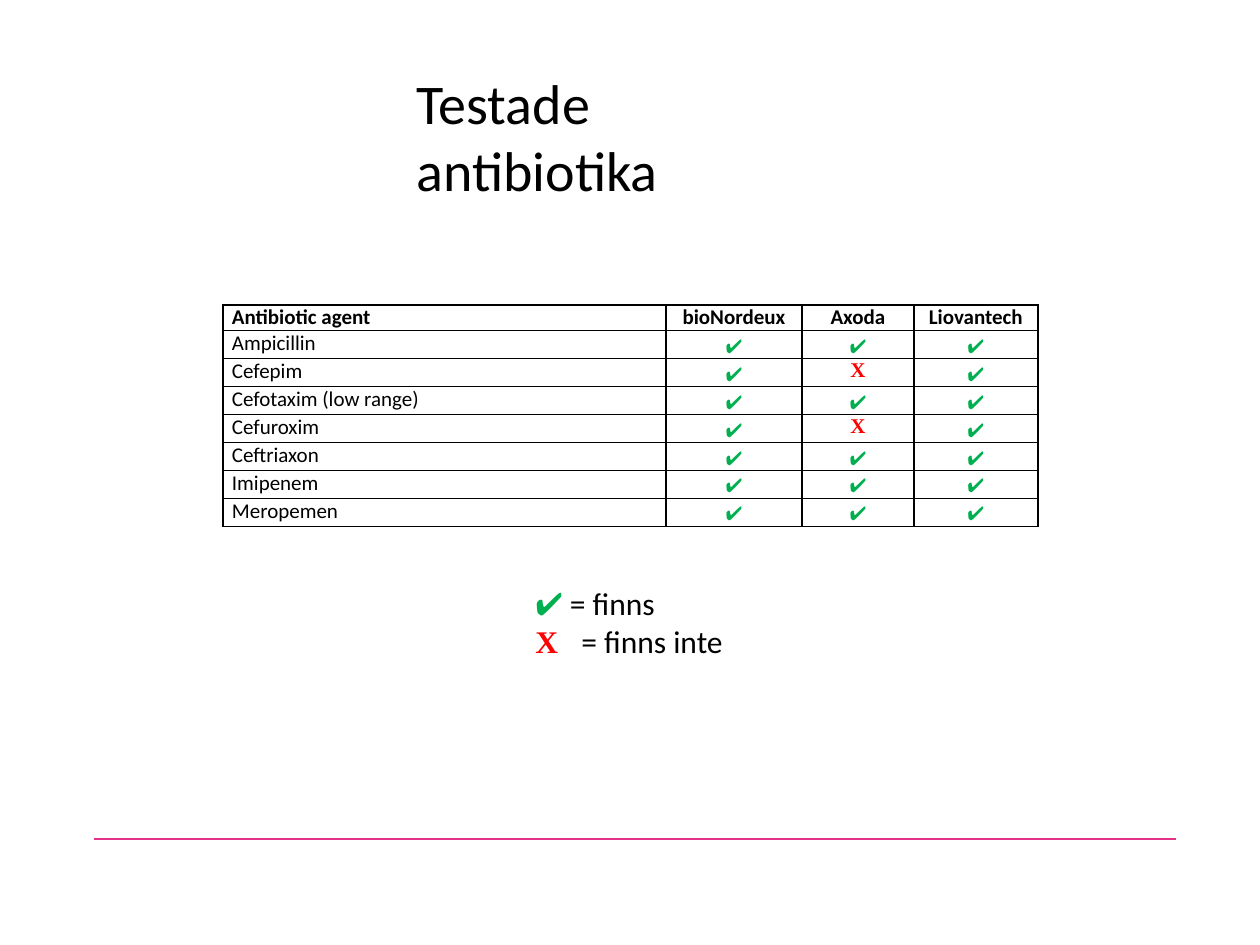
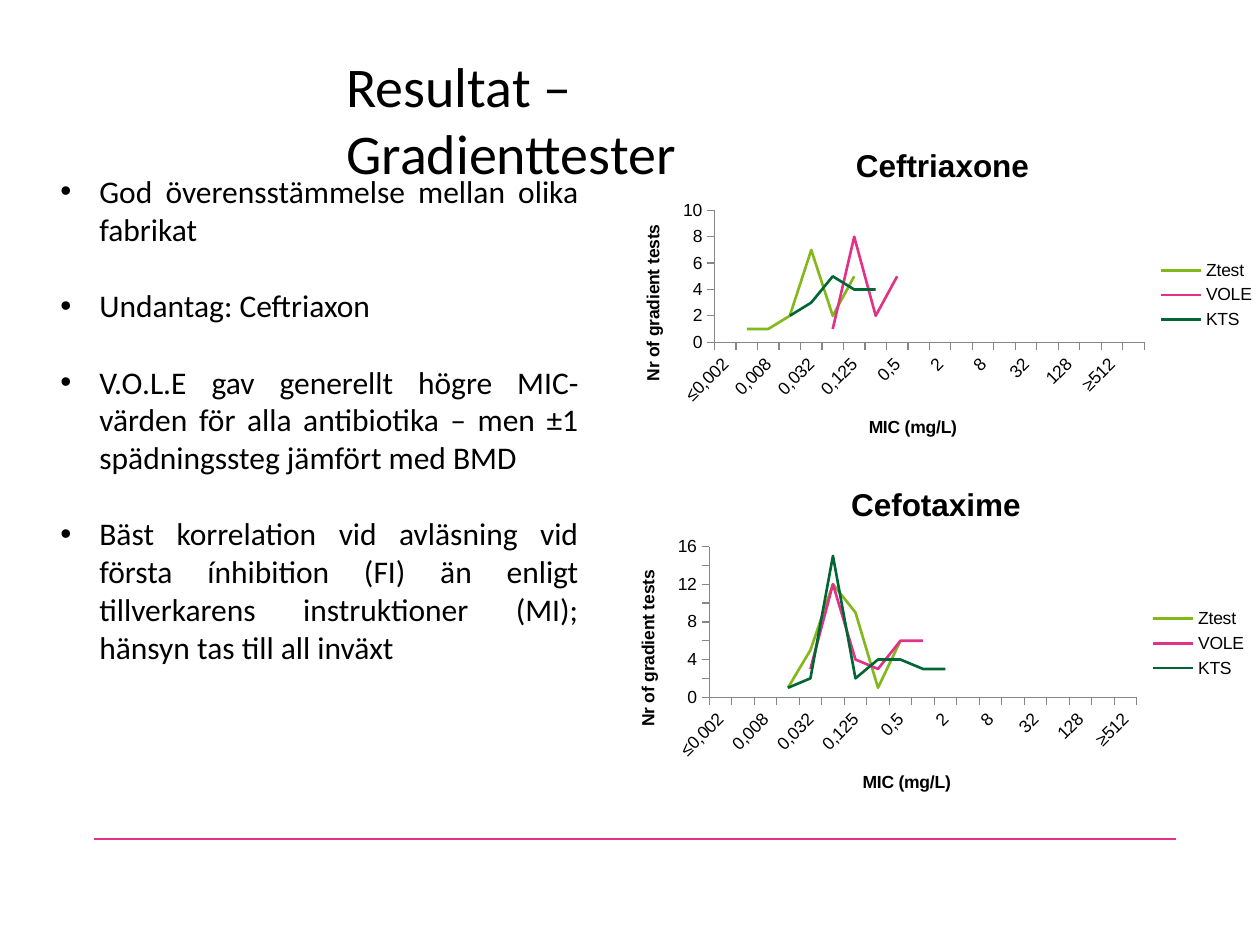
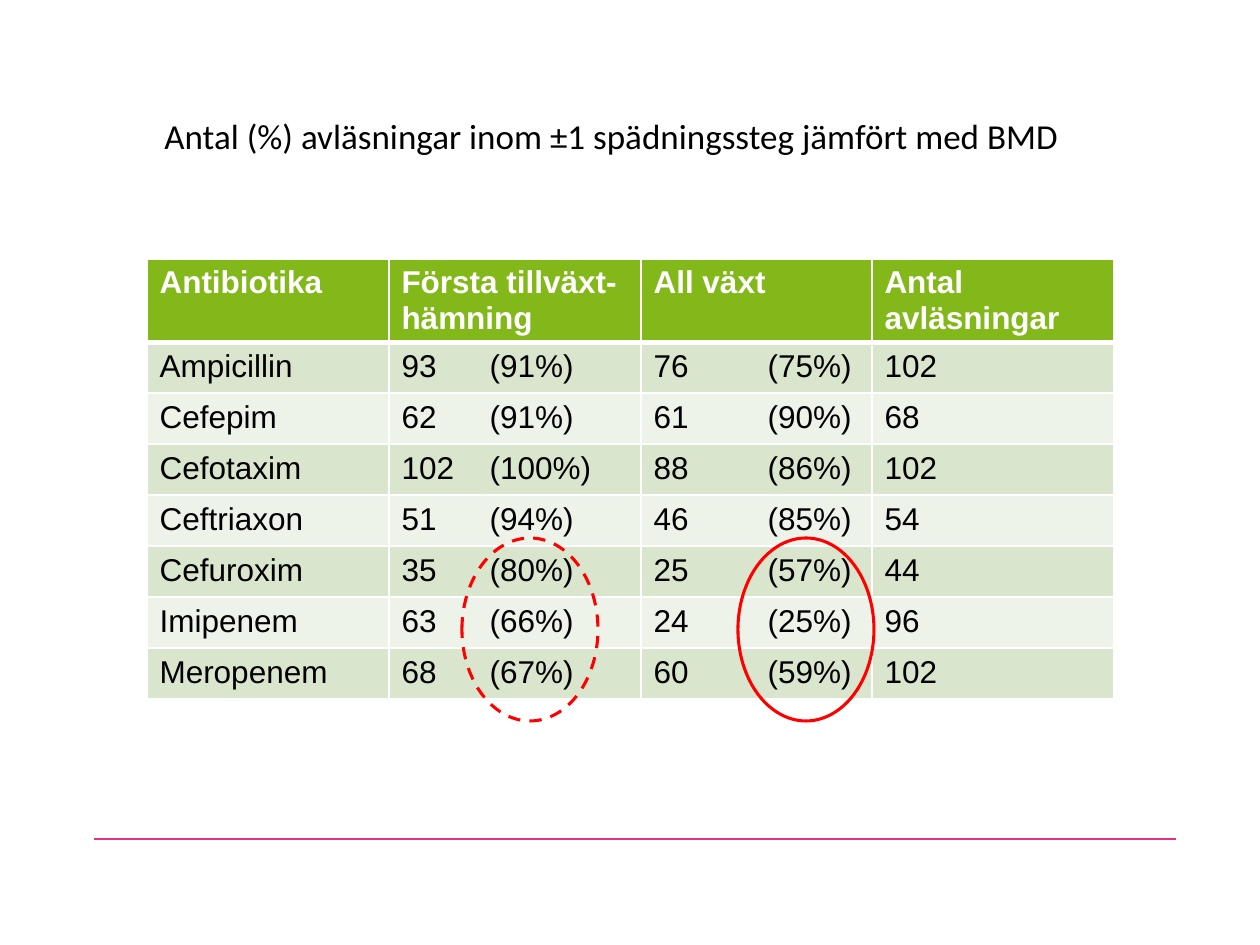
from dataclasses import dataclass

from lxml import etree
from pptx import Presentation
from pptx.chart.data import CategoryChartData
from pptx.dml.color import RGBColor
from pptx.enum.chart import XL_CHART_TYPE, XL_LEGEND_POSITION, XL_TICK_MARK
from pptx.enum.dml import MSO_LINE
from pptx.enum.shapes import MSO_CONNECTOR, MSO_SHAPE
from pptx.enum.text import MSO_AUTO_SIZE, PP_ALIGN
from pptx.oxml.ns import qn
from pptx.util import Pt

LEFT, CENTER, JUSTIFY = PP_ALIGN.LEFT, PP_ALIGN.CENTER, PP_ALIGN.JUSTIFY
OUTSIDE = XL_TICK_MARK.OUTSIDE
PX_PER_INCH = 126


@dataclass(frozen=True)
class Theme:
    black: str = "000000"
    white: str = "FFFFFF"
    pink: str = "E13288"
    lime: str = "83B81A"
    forest: str = "006633"
    check_green: str = "00B050"
    red: str = "FF0000"
    axis_grey: str = "868686"
    bands: tuple = ("D9E6CD", "EDF3E8")
    body_font: str = "Calibri"
    data_font: str = "Arial"
    check_font: str = "Noto Sans CJK JP"
    cross_font: str = "Times New Roman"
    title: int = 32
    subtitle: int = 20
    body: int = 18
    small: int = 12
    check: int = 11
    chart: int = 10


THEME = Theme()

AVAILABLE = [
    ("Ampicillin", "✔✔✔"),
    ("Cefepim", "✔X✔"),
    ("Cefotaxim (low range)", "✔✔✔"),
    ("Cefuroxim", "✔X✔"),
    ("Ceftriaxon", "✔✔✔"),
    ("Imipenem", "✔✔✔"),
    ("Meropemen", "✔✔✔"),
]
FINDINGS = [
    "God överensstämmelse mellan olika fabrikat",
    "Undantag: Ceftriaxon",
    "V.O.L.E gav generellt högre MIC-värden för alla antibiotika – men ±1 "
    "spädningssteg jämfört med BMD",
    "Bäst korrelation vid avläsning vid första ínhibition (FI) än enligt "
    "tillverkarens instruktioner (MI); hänsyn tas till all inväxt",
]
MIC_STEPS = ["≤0,002", "0,004", "0,008", "0,016", "0,032", "0,064", "0,125", "0,25", "0,5",
             "1", "2", "4", "8", "16", "32", "64", "128", "256", "≥512"]
TEST_COLORS = {"Ztest": THEME.lime, "VOLE": THEME.pink, "KTS": THEME.forest}
# Each test: index of its first MIC step, then the counts from there on
CEFTRIAXONE = [(1, [1, 1, 2, 7, 2, 5]), (3, [2, None, 1, 8, 2, 5]), (3, [2, 3, 5, 4, 4])]
CEFOTAXIME = [(3, [1, 5, 12, 9, 1, 6]), (4, [3, 12, 4, 3, 6, 6]),
              (3, [1, 2, 15, 2, 4, 4, 3, 3])]
READINGS = [
    ("Antibiotika", "Första tillväxt-hämning", "All växt", "Antal avläsningar"),
    ("Ampicillin", "93\t(91%)", "76\t(75%)", "102"),
    ("Cefepim", "62\t(91%)", "61\t(90%)", "68"),
    ("Cefotaxim", "102\t(100%)", "88\t(86%)", "102"),
    ("Ceftriaxon", "51\t(94%)", "46\t(85%)", "54"),
    ("Cefuroxim", "35\t(80%)", "25\t(57%)", "44"),
    ("Imipenem", "63\t(66%)", "24\t(25%)", "96"),
    ("Meropenem", "68\t(67%)", "60\t(59%)", "102"),
]
PERCENT_TABS = {1: 88, 2: 114}


def px(length):
    return round(length * 914400 / PX_PER_INCH)


def rgb(color):
    return RGBColor.from_string(color)


def add_xml(parent, tag, **attributes):
    child = etree.SubElement(parent, qn(tag))
    for name, value in attributes.items():
        child.set(name, str(value))
    return child


def style_font(font, size, name, color, bold=False):
    font.size, font.name, font.bold = Pt(size), name, bold
    font.color.rgb = rgb(color)


def style_span(span, size, name, color, bold=False):
    """Symbols count as East Asian text, so that typeface is set too."""
    style_font(span.font, size, name, color, bold)
    add_xml(span._r.get_or_add_rPr(), "a:ea", typeface=name)


def set_tab(para, position):
    tabs = add_xml(para._p.get_or_add_pPr(), "a:tabLst")
    add_xml(tabs, "a:tab", pos=px(position), algn="l")


def set_bullet(para, indent):
    properties = para._p.get_or_add_pPr()
    properties.set("marL", str(px(indent)))
    properties.set("indent", str(-px(indent)))
    add_xml(properties, "a:buFont", typeface=THEME.data_font)
    add_xml(properties, "a:buChar", char="•")


def add_page(deck):
    """Blank page with the pink footer line."""
    page = deck.slides.add_slide(deck.slide_layouts[6])
    footer = page.shapes.add_connector(MSO_CONNECTOR.STRAIGHT,
                                       px(94), px(839), px(1176), px(839))
    footer.line.color.rgb = rgb(THEME.pink)
    footer.line.width = Pt(1.5)
    add_xml(footer._element.spPr, "a:effectLst")
    return page


def add_text_box(page, left, top, width, height, wrap=True):
    frame = page.shapes.add_textbox(px(left), px(top), px(width), px(height)).text_frame
    frame.word_wrap = wrap
    frame.auto_size = MSO_AUTO_SIZE.SHAPE_TO_FIT_TEXT
    return frame


def add_title(page, text, left, top, width, height, size=THEME.title, wrap=True):
    frame = add_text_box(page, left, top, width, height, wrap)
    frame.text = text
    style_span(frame.paragraphs[0].runs[0], size, THEME.body_font, THEME.black)


def add_mark_key(page):
    frame = add_text_box(page, 523, 578, 214, 127, wrap=False)
    frame.text = "✔ \nX\t"
    check, cross = frame.paragraphs
    set_tab(cross, 46)
    style_span(check.runs[0], THEME.body, THEME.check_font, THEME.check_green)
    style_span(cross.runs[0], THEME.body, THEME.cross_font, THEME.red, True)
    for para, meaning in ((check, "= finns"), (cross, "= finns inte")):
        span = para.add_run()
        span.text = meaning
        style_span(span, THEME.body, THEME.body_font, THEME.black)


def add_bullets(page, texts, left, top, width, height):
    frame = add_text_box(page, left, top, width, height)
    frame.text = "\n".join(texts)
    for index, para in enumerate(frame.paragraphs):
        set_bullet(para, 39)
        para.alignment = JUSTIFY
        if index:
            para.space_before = Pt(22)
        style_span(para.runs[0], THEME.body, THEME.body_font, THEME.black)


def add_grid(page, left, top, widths, heights):
    table = page.shapes.add_table(len(heights), len(widths), px(left), px(top),
                                  px(sum(widths)), px(sum(heights))).table
    table.first_row = table.horz_banding = False
    for column, width in zip(table.columns, widths):
        column.width = px(width)
    for row, height in zip(table.rows, heights):
        row.height = px(height)
    return table


def set_borders(cell, color, top=1, bottom=1):
    properties = cell._tc.get_or_add_tcPr()
    for side, width in (("L", 1), ("R", 1), ("T", top), ("B", bottom)):
        line = add_xml(properties, f"a:ln{side}", w=Pt(width))
        add_xml(add_xml(line, "a:solidFill"), "a:srgbClr", val=color)


def fill_cell(cell, text, style, align=LEFT, tab=None):
    cell.text = text
    para = cell.text_frame.paragraphs[0]
    if tab:
        set_tab(para, tab)
    para.alignment = align
    style_span(para.runs[0], *style)


def add_availability_table(page):
    label = (THEME.small, THEME.body_font, THEME.black)
    marks = {"✔": (THEME.check, THEME.check_font, THEME.check_green),
             "X": (THEME.small, THEME.cross_font, THEME.red, True)}
    rows = [("Antibiotic agent", "bioNordeux", "Axoda", "Liovantech")]
    rows += [(agent, *found) for agent, found in AVAILABLE]
    table = add_grid(page, 223, 305, [443, 136, 112, 124], [25] * len(rows))
    for r, row in enumerate(rows):
        for c, text in enumerate(row):
            cell = table.cell(r, c)
            cell.margin_left = cell.margin_right = px(9)
            cell.margin_top = cell.margin_bottom = 0
            set_borders(cell, THEME.black)
            cell.fill.background()
            style = marks.get(text, (*label, r == 0))
            fill_cell(cell, text, style, CENTER if c else LEFT)


def add_readings_table(page):
    heights = [82] + [51] * (len(READINGS) - 1)
    table = add_grid(page, 147, 259, [242, 252, 231, 242], heights)
    for r, row in enumerate(READINGS):
        header = r == 0
        color = THEME.white if header else THEME.black
        for c, text in enumerate(row):
            cell = table.cell(r, c)
            set_borders(cell, THEME.white, 3 if r == 1 else 1, 3 if header else 1)
            cell.fill.solid()
            cell.fill.fore_color.rgb = rgb(THEME.lime if header else THEME.bands[(r - 1) % 2])
            fill_cell(cell, text, (THEME.body, THEME.data_font, color, header),
                      tab=None if header else PERCENT_TABS.get(c))


def add_ring(page, left, dash=None):
    ring = page.shapes.add_shape(MSO_SHAPE.OVAL, px(left), px(538), px(136), px(183))
    ring.shadow.inherit = False
    ring.fill.background()
    ring.line.color.rgb = rgb(THEME.red)
    ring.line.width = Pt(1.75)
    if dash:
        ring.line.dash_style = dash


def set_plot_layout(chart, x, y, w, h):
    """Place the inner plot area, in fractions of the chart."""
    plot_area = chart._chartSpace.chart.plotArea
    for old in plot_area.findall(qn("c:layout")):
        plot_area.remove(old)
    layout = etree.Element(qn("c:layout"))
    manual = add_xml(layout, "c:manualLayout")
    add_xml(manual, "c:layoutTarget", val="inner")
    for name in ("xMode", "yMode"):
        add_xml(manual, f"c:{name}", val="edge")
    for name, value in zip("xywh", (x, y, w, h)):
        add_xml(manual, f"c:{name}", val=value)
    plot_area.insert(0, layout)


def style_axis(axis, title):
    axis.has_major_gridlines = False
    axis.major_tick_mark, axis.minor_tick_mark = OUTSIDE, XL_TICK_MARK.NONE
    axis.format.line.color.rgb = rgb(THEME.axis_grey)
    style_font(axis.tick_labels.font, THEME.chart, THEME.data_font, THEME.black)
    axis.axis_title.text_frame.text = title
    style_font(axis.axis_title.text_frame.paragraphs[0].runs[0].font,
               THEME.chart, THEME.data_font, THEME.black, True)


def slant_step_labels(axis):
    """Turn the labels by 45 degrees and show every second one."""
    axis._element.find(qn("c:txPr")).find(qn("a:bodyPr")).set("rot", "-2700000")
    skip = etree.Element(qn("c:tickLblSkip"))
    skip.set("val", "2")
    axis._element.find(qn("c:noMultiLvlLbl")).addprevious(skip)


def add_mic_chart(page, title, tests, place, layout, maximum, steps):
    data = CategoryChartData()
    data.categories = MIC_STEPS
    for name, (start, counts) in zip(TEST_COLORS, tests):
        values = [None] * start + counts
        data.add_series(name, values + [None] * (steps - len(values)))
    chart = page.shapes.add_chart(XL_CHART_TYPE.LINE, *map(px, place), data).chart
    style_font(chart.font, THEME.chart, THEME.data_font, THEME.black)
    chart.has_title = True
    chart.chart_title.text_frame.text = title
    style_font(chart.chart_title.text_frame.paragraphs[0].runs[0].font,
               THEME.body, THEME.data_font, THEME.black, True)
    chart.has_legend = True
    chart.legend.position = XL_LEGEND_POSITION.RIGHT
    chart.legend.include_in_layout = False
    chart.plots[0].vary_by_categories = False
    for series in chart.plots[0].series:
        series.smooth = False
        series.format.line.color.rgb = rgb(TEST_COLORS[series.name])
        series.format.line.width = Pt(1.5)
    style_axis(chart.category_axis, "MIC (mg/L)")
    slant_step_labels(chart.category_axis)
    style_axis(chart.value_axis, "Nr of gradient tests")
    chart.value_axis.minimum_scale = 0
    chart.value_axis.maximum_scale = maximum
    chart.value_axis.major_unit = 2
    set_plot_layout(chart, *layout)


def main():
    deck = Presentation()
    deck.slide_width, deck.slide_height = px(1260), px(945)

    page = add_page(deck)
    add_availability_table(page)
    add_mark_key(page)
    add_title(page, "Testade antibiotika", 404, 62, 440, 81)

    page = add_page(deck)
    add_title(page, "Resultat – Gradienttester", 334, 45, 592, 81, wrap=False)
    add_bullets(page, FINDINGS, 48, 166, 543, 645)
    add_mic_chart(page, "Ceftriaxone", CEFTRIAXONE, (617, 126, 651, 338),
                  (0.15, 0.25, 0.66, 0.39), 10, len(MIC_STEPS) + 1)
    add_mic_chart(page, "Cefotaxime", CEFOTAXIME, (612, 464, 648, 359),
                  (0.15, 0.23, 0.66, 0.42), 16, len(MIC_STEPS))

    page = add_page(deck)
    add_readings_table(page)
    add_title(page, "Antal (%) avläsningar inom ±1 spädningssteg jämfört med BMD",
              152, 108, 955, 55, THEME.subtitle)
    add_ring(page, 738)
    add_ring(page, 462, MSO_LINE.DASH)

    deck.save("out.pptx")


if __name__ == "__main__":
    main()
